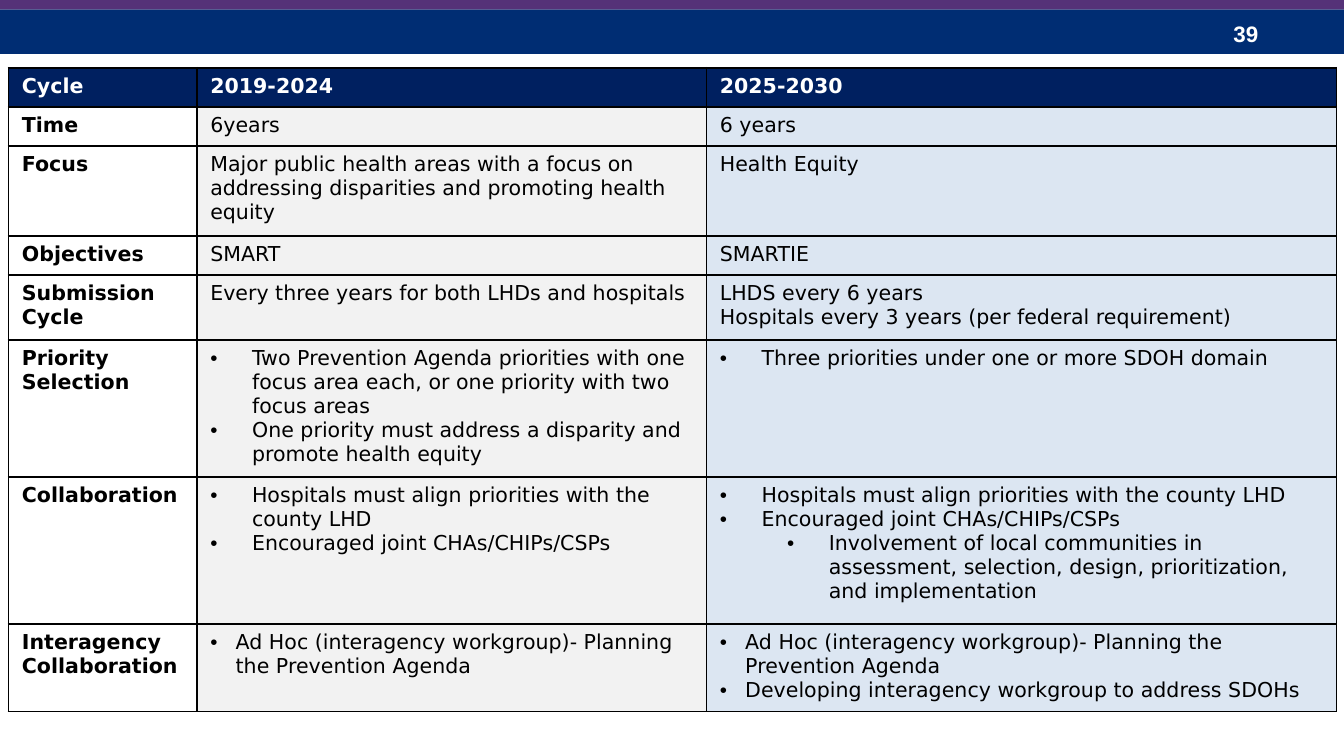
from lxml.etree import SubElement
from pptx import Presentation
from pptx.dml.color import RGBColor
from pptx.enum.shapes import MSO_SHAPE
from pptx.enum.text import MSO_ANCHOR
from pptx.oxml import parse_xml
from pptx.oxml.ns import nsdecls, qn
from pptx.util import Cm, Pt

COLORS = {
    "band": "002D73", "stripe": "553278", "header": "002060", "label": "FFFFFF",
    "old": "F2F2F2", "new": "DCE6F2", "text": "000000", "light": "FFFFFF",
}
INDENTS = {"bullet": (0, 0.79, 0.79), "sub": (1, 2.06, 0.79), "tight": (0, 0.48, 0.48)}
COL_WIDTHS = [3.56, 9.63, 11.91]
ROW_HEIGHTS = [0.74, 0.74, 1.7, 0.74, 1.23, 2.59, 2.78, 1.65]
ROWS = [
    ("Cycle", [("plain", "2019-2024")], [("plain", "2025-2030")]),
    ("Time", [("plain", "6years")], [("plain", "6 years")]),
    ("Focus",
     [("plain", "Major public health areas with a focus on addressing disparities "
                "and promoting health equity")],
     [("plain", "Health Equity")]),
    ("Objectives", [("plain", "SMART")], [("plain", "SMARTIE")]),
    ("Submission Cycle",
     [("plain", "Every three years for both LHDs and hospitals")],
     [("plain", "LHDS every 6 years"),
      ("plain", "Hospitals every 3 years (per federal requirement)")]),
    ("Priority Selection",
     [("bullet", "Two Prevention Agenda priorities with one focus area each, "
                 "or one priority with two focus areas"),
      ("bullet", "One priority must address a disparity and promote health equity")],
     [("bullet", "Three priorities under one or more SDOH domain")]),
    ("Collaboration",
     [("bullet", "Hospitals must align priorities with the county LHD"),
      ("bullet", "Encouraged joint CHAs/CHIPs/CSPs")],
     [("bullet", "Hospitals must align priorities with the county LHD"),
      ("bullet", "Encouraged joint CHAs/CHIPs/CSPs"),
      ("sub", "Involvement of local communities in assessment, selection, design, "
              "prioritization, and implementation")]),
    ("Interagency Collaboration",
     [("tight", "Ad Hoc (interagency workgroup)- Planning the Prevention Agenda")],
     [("tight", "Ad Hoc (interagency workgroup)- Planning the Prevention Agenda"),
      ("tight", "Developing interagency workgroup to address SDOHs")]),
]


def rgb(name):
    return RGBColor.from_string(COLORS[name])


def add_bar(s, top, height, color):
    bar = s.shapes.add_shape(MSO_SHAPE.RECTANGLE, 0, Cm(top), Cm(25.4), Cm(height))
    bar.shadow.inherit = False
    bar.fill.solid()
    bar.fill.fore_color.rgb = rgb(color)
    bar.line.fill.background()


def add_text(p, text, font, size, bold, color):
    r = p.add_run()
    r.text = text
    r.font.name, r.font.size, r.font.bold = font, Pt(size), bold
    r.font.color.rgb = rgb(color)


def set_bullet(p, style):
    level, margin, hang = INDENTS[style]
    p.level = level
    pPr = p._p.get_or_add_pPr()
    pPr.set("marL", str(Cm(margin)))
    pPr.set("indent", str(-Cm(hang)))
    SubElement(pPr, qn("a:buFont")).set("typeface", "Arial")
    SubElement(pPr, qn("a:buChar")).set("char", "•")


def set_borders(cell):
    tcPr = cell._tc.get_or_add_tcPr()
    for i, side in enumerate("LRTB"):
        tcPr.insert(i, parse_xml(
            f'<a:ln{side} {nsdecls("a")} w="{Pt(1)}"><a:solidFill>'
            f'<a:srgbClr val="{COLORS["text"]}"/></a:solidFill></a:ln{side}>'))


def fill_cell(cell, paragraphs, fill, bold, color):
    cell.fill.solid()
    cell.fill.fore_color.rgb = rgb(fill)
    set_borders(cell)
    tf = cell.text_frame
    for i, (style, text) in enumerate(paragraphs):
        p = tf.add_paragraph() if i else tf.paragraphs[0]
        if style in INDENTS:
            set_bullet(p, style)
        add_text(p, text, "DejaVu Sans", 11, bold, color)


def add_comparison(s):
    table = s.shapes.add_table(
        len(ROWS), len(COL_WIDTHS), Cm(0.16), Cm(1.28),
        Cm(sum(COL_WIDTHS)), Cm(sum(ROW_HEIGHTS))).table
    for col, width in zip(table.columns, COL_WIDTHS):
        col.width = Cm(width)
    for r, (label, old, new) in enumerate(ROWS):
        table.rows[r].height = Cm(ROW_HEIGHTS[r])
        cells = zip(("label", "old", "new"), ([("plain", label)], old, new))
        for c, (fill, paragraphs) in enumerate(cells):
            fill_cell(table.cell(r, c), paragraphs, fill if r else "header",
                      r == 0 or c == 0, "text" if r else "light")


def main():
    """Build the slide comparing the two planning cycles."""
    prs = Presentation()
    prs.slide_width, prs.slide_height = Cm(25.4), Cm(14.29)
    s = prs.slides.add_slide(prs.slide_layouts[6])
    add_bar(s, 0.18, 0.84, "band")
    number = s.shapes.add_textbox(Cm(23.06), Cm(0.25), Cm(1.9), Cm(0.76))
    tf = number.text_frame
    tf.word_wrap = True
    tf.vertical_anchor = MSO_ANCHOR.MIDDLE
    add_text(tf.paragraphs[0], "39", "Arial", 12, True, "light")
    add_bar(s, 0, 0.18, "stripe")
    add_comparison(s)
    prs.save("out.pptx")


if __name__ == "__main__":
    main()
